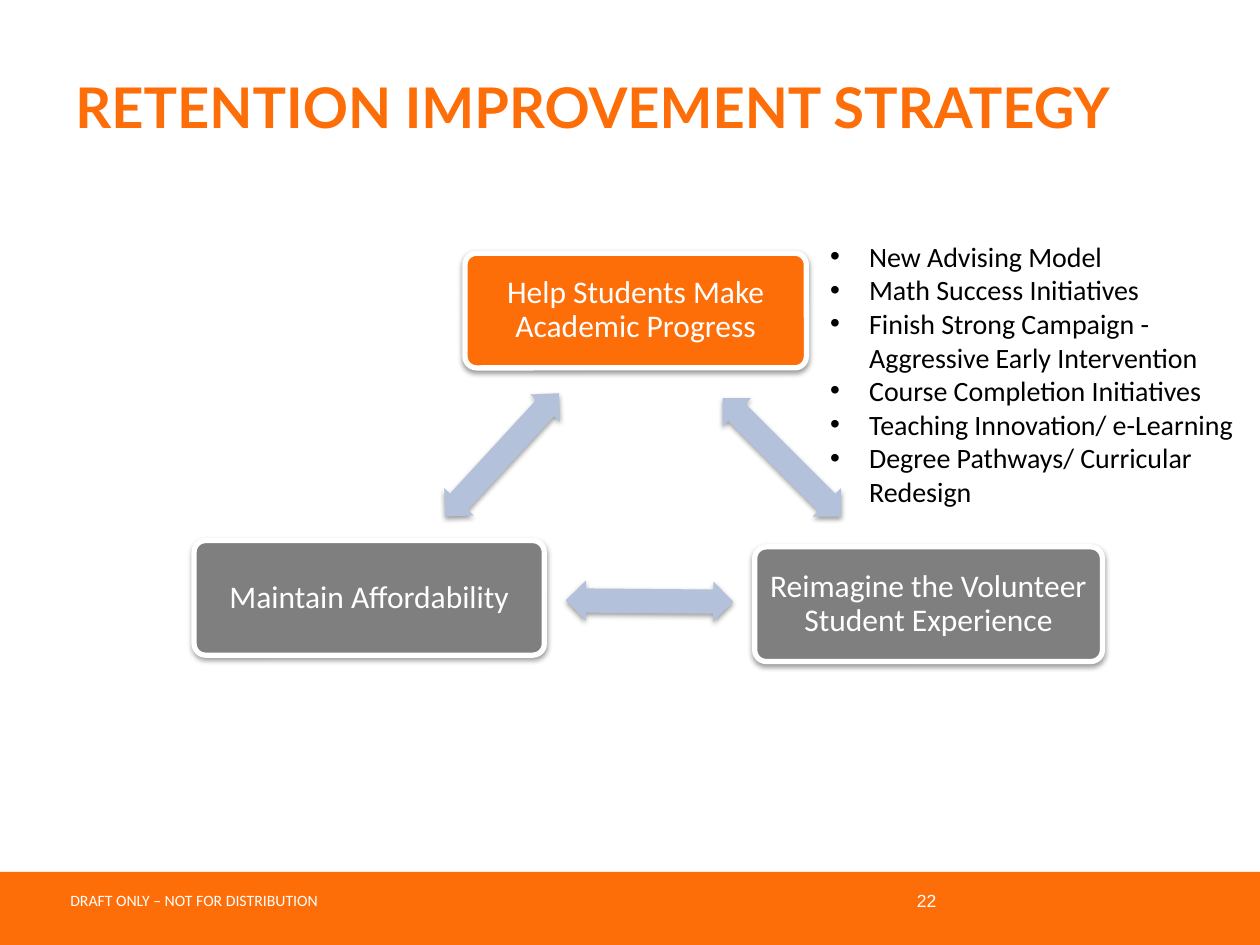
from lxml.etree import SubElement
from pptx import Presentation
from pptx.dml.color import RGBColor as Rgb
from pptx.enum.shapes import MSO_SHAPE as Shape
from pptx.enum.text import MSO_ANCHOR as Anchor, MSO_AUTO_SIZE as Fit, PP_ALIGN as Align
from pptx.oxml.ns import qn
from pptx.util import Inches, Pt

WIDTH, HEIGHT = Inches(10), Inches(7.5)
COLORS = {"orange": "FD6D08", "gray": "7F7F7F", "blue": "B3C1DB", "white": "FFFFFF", "black": "000000"}
GOALS = [
    ("Help Students Make Academic Progress", "orange", (36.9, 26.8, 27.1, 12.13)),
    ("Reimagine the Volunteer Student Experience", "gray", (59.9, 57.87, 27.6, 12.13)),
    ("Maintain Affordability", "gray", (15.4, 57.2, 27.8, 12.13)),
]
ARROWS = [(55.4, 46.27, 45), (44.9, 61.47, 180.5), (33.2, 46, 312.6)]
INITIATIVES = [
    "New Advising Model",
    "Math Success Initiatives",
    "Finish Strong Campaign - Aggressive Early Intervention",
    "Course Completion Initiatives",
    "Teaching Innovation/ e-Learning",
    "Degree Pathways/ Curricular Redesign",
]


def color(name):
    """Return the named palette color."""
    return Rgb.from_string(COLORS[name])


def apply(target, values):
    """Set every attribute named in a dict of format values."""
    for name, value in values.items():
        setattr(target, name, value)


def place(left, top, width, height):
    """Turn percentages of the slide into lengths."""
    shares = zip((left, top, width, height), (WIDTH, HEIGHT) * 2)
    return [round(share * side / 100) for share, side in shares]


def add_bullet(para):
    """Give a paragraph a round bullet with a hanging indent."""
    props = para._p.get_or_add_pPr()
    props.set("marL", str(Inches(0.31)))
    props.set("indent", str(-Inches(0.31)))
    SubElement(props, qn("a:buFont")).set("typeface", "Arial")
    SubElement(props, qn("a:buChar")).set("char", "•")


def write(box, lines, size, shade, face="Calibri", bold=False, bullets=False, para_format=None, **frame_format):
    """Fill a box with paragraphs in one style."""
    frame = box.text_frame
    apply(frame, {"word_wrap": True, **frame_format})
    for index, line in enumerate(lines):
        para = frame.paragraphs[0] if index == 0 else frame.add_paragraph()
        if bullets:
            add_bullet(para)
        apply(para, para_format or {})
        span = para.add_run()
        span.text = line
        apply(span.font, {"name": face, "size": Pt(size), "bold": bold})
        span.font.color.rgb = color(shade)


def add_text(page, area, lines, size, shade, **style):
    """Add a text box."""
    write(page.shapes.add_textbox(*place(*area)), lines, size, shade, **style)


def add_block(page, kind, area, shade):
    """Add a flat filled shape without outline."""
    block = page.shapes.add_shape(kind, *place(*area))
    block.fill.solid()
    block.fill.fore_color.rgb = color(shade)
    block.line.fill.background()
    block.shadow.inherit = False
    return block


def add_shadow(block):
    """Cast a soft shadow straight down."""
    effects = block._element.spPr.find(qn("a:effectLst"))
    shadow = SubElement(effects, qn("a:outerShdw"))
    values = {"blurRad": Pt(3.1), "dist": Pt(1.6), "dir": 90 * 60000, "rotWithShape": 0}
    for name, value in values.items():
        shadow.set(name, str(value))
    tint = SubElement(shadow, qn("a:srgbClr"))
    tint.set("val", COLORS["black"])
    SubElement(tint, qn("a:alpha")).set("val", "38000")


def add_goal(page, label, shade, area):
    """Add a rounded goal box with a white border."""
    box = add_block(page, Shape.ROUNDED_RECTANGLE, area, shade)
    box.adjustments[0] = 0.1
    box.line.color.rgb = color("white")
    box.line.width = Pt(3)
    add_shadow(box)
    margins = {f"margin_{side}": Inches(0.07) for side in ("left", "right", "top", "bottom")}
    write(box, [label], 18, "white", vertical_anchor=Anchor.MIDDLE,
          para_format={"alignment": Align.CENTER, "line_spacing": 0.9}, **margins)


def add_arrow(page, left, top, angle):
    """Add a rotated double arrow between two goals."""
    arrow = add_block(page, Shape.LEFT_RIGHT_ARROW, (left, top, 13.3, 4.27), "blue")
    arrow.adjustments[0], arrow.adjustments[1] = 0.6, 0.5
    arrow.rotation = angle
    add_shadow(arrow)


def main():
    """Build the retention strategy slide."""
    deck = Presentation()
    apply(deck, {"slide_width": WIDTH, "slide_height": HEIGHT})
    page = deck.slides.add_slide(deck.slide_layouts[6])
    add_block(page, Shape.RECTANGLE, (0, 92.27, 100, 7.73), "orange")
    add_text(page, (4.6, 93.6, 22, 3.33), ["DRAFT ONLY – NOT FOR DISTRIBUTION"], 9, "white",
             word_wrap=False, auto_size=Fit.SHAPE_TO_FIT_TEXT)
    add_text(page, (5, 2.93, 90, 16.67), ["RETENTION IMPROVEMENT STRATEGY"], 32, "orange",
             face="Lato", bold=True, vertical_anchor=Anchor.MIDDLE)
    add_text(page, (52, 92.67, 23.3, 5.33), ["22"], 10, "white", face="Arial",
             vertical_anchor=Anchor.MIDDLE, para_format={"alignment": Align.RIGHT})
    for goal, arrow in zip(GOALS, ARROWS):
        add_goal(page, *goal)
        add_arrow(page, *arrow)
    add_text(page, (64.9, 24.67, 35.6, 30.13), INITIATIVES, 16, "black",
             bullets=True, auto_size=Fit.SHAPE_TO_FIT_TEXT)
    deck.save("out.pptx")


if __name__ == "__main__":
    main()
